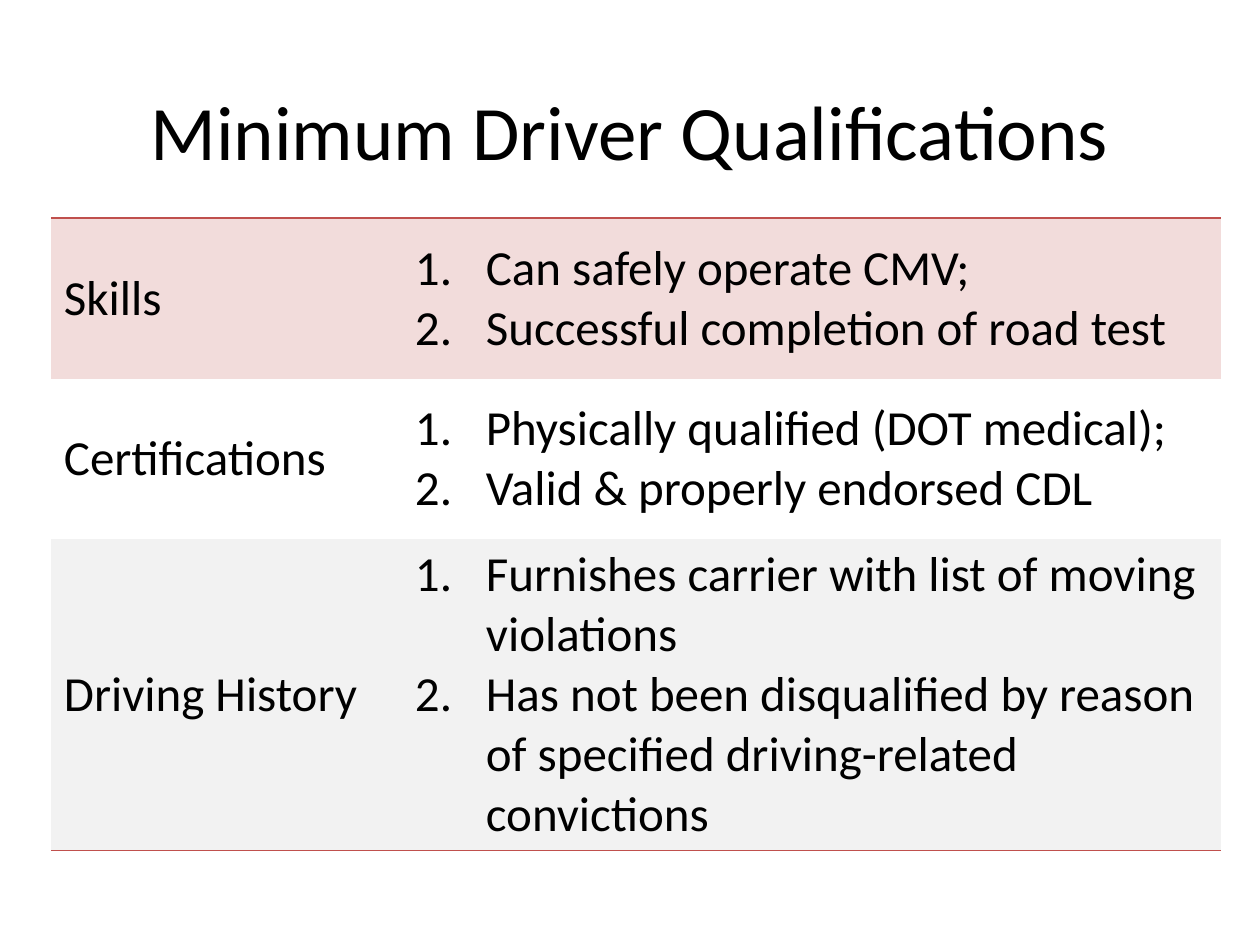
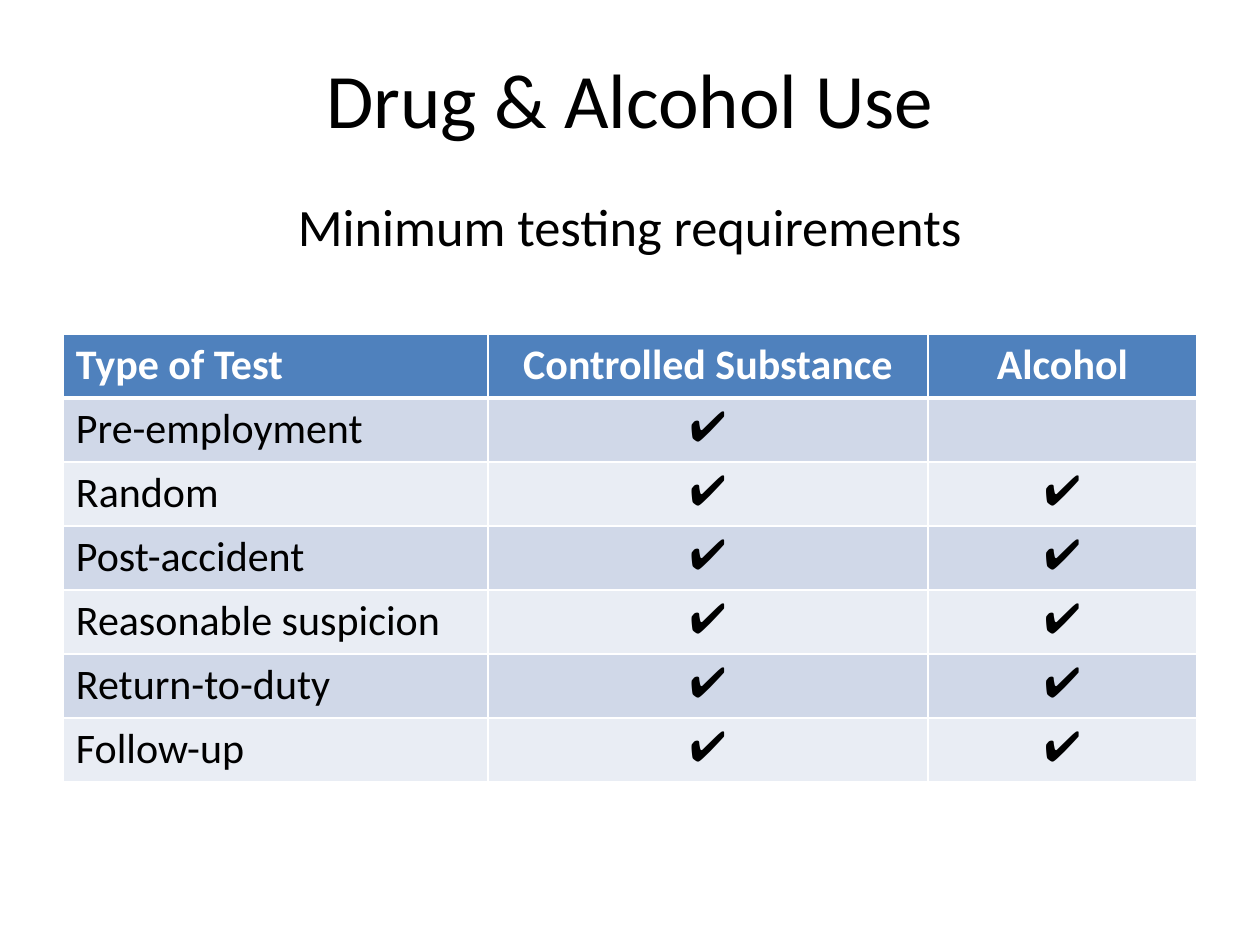
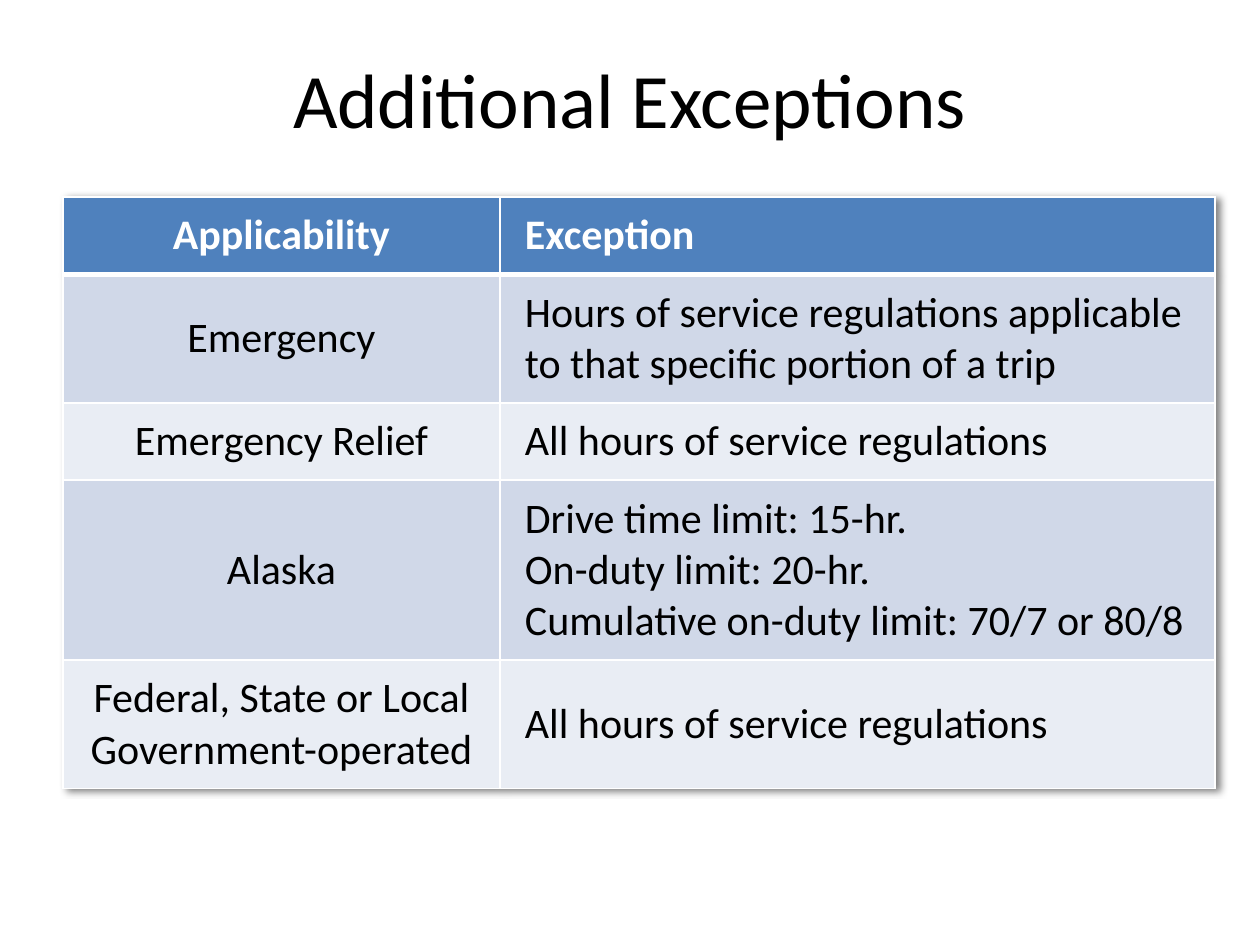
"""Builds three slides of driver rules: qualifications, drug testing and exceptions."""
import dataclasses

import pptx
import pptx.dml.color
import pptx.enum.text
import pptx.oxml
import pptx.oxml.ns
import pptx.util

ALIGN = pptx.enum.text.PP_ALIGN
ANCHOR = pptx.enum.text.MSO_ANCHOR
NO_STYLE = "{2D5ABB26-0587-4C30-8999-92F81FD0307C}"


@dataclasses.dataclass(frozen=True)
class Theme:
    font: str = "Calibri"
    mark_font: str = "Arial"
    ink: str = "000000"
    white: str = "FFFFFF"
    header: str = "4F81BD"
    bands: tuple = ("D0D8E8", "E9EDF4")
    rule: str = "C0504D"
    qualification_fills: tuple = ("F2DCDB", None, "F2F2F2")
    title_size: int = 44
    subtitle_size: int = 30
    list_size: int = 28
    grid_size: int = 24


theme = Theme()


def px(count):
    return pptx.util.Emu(round(count * 914400 / 126))


def write(frame, text, size, color=theme.ink, align=ALIGN.LEFT, bold=False, numbered=False):
    frame.text = text
    for paragraph in frame.paragraphs:
        paragraph.alignment = align
        paragraph.font.name = theme.mark_font if text == "✔" else theme.font
        paragraph.font.size = pptx.util.Pt(size)
        paragraph.font.bold = bold
        paragraph.font.color.rgb = pptx.dml.color.RGBColor.from_string(color)
        if numbered:
            properties = paragraph._p.get_or_add_pPr()
            properties.set("marL", str(px(71)))
            properties.set("indent", str(-px(71)))
            properties.insert(0, pptx.oxml.parse_xml(
                f'<a:buAutoNum {pptx.oxml.ns.nsdecls("a")} type="arabicPeriod"/>'))


qualifications = dict(
    title="Minimum Driver Qualifications", title_box=(63, 38, 1134, 183),
    corner=(51, 218), columns=(351, 819), heights=(161, 160, 311),
    size=theme.list_size, aligns=(ALIGN.LEFT, ALIGN.LEFT), anchor=ANCHOR.MIDDLE,
    margins=(13, 6), gridded=False, shadowed=False,
    rows=[
        ("Skills", "Can safely operate CMV;\nSuccessful completion of road test"),
        ("Certifications", "Physically qualified (DOT medical);\nValid & properly endorsed CDL"),
        ("Driving History", "Furnishes carrier with list of moving violations\n"
         "Has not been disqualified by reason of specified driving-related convictions"),
    ])
testing = dict(
    title="Drug & Alcohol Use", title_box=(63, 19, 1134, 158),
    subtitle="Minimum testing requirements",
    corner=(63, 334), columns=(425, 440, 269), heights=(64,) * 7,
    size=theme.grid_size, aligns=(ALIGN.LEFT, ALIGN.CENTER, ALIGN.CENTER), anchor=ANCHOR.TOP,
    margins=(13, 6), gridded=True, shadowed=False,
    rows=[
        ("Type of Test", "Controlled Substance", "Alcohol"),
        ("Pre-employment", "✔", ""),
        *((test, "✔", "✔") for test in (
            "Random", "Post-accident", "Reasonable suspicion", "Return-to-duty", "Follow-up")),
    ])
exceptions = dict(
    title="Additional Exceptions", title_box=(63, 19, 1134, 158),
    corner=(63, 197), columns=(437, 715), heights=(76, 128, 76, 180, 128),
    size=theme.grid_size, aligns=(ALIGN.CENTER, ALIGN.LEFT), anchor=ANCHOR.MIDDLE,
    margins=(25, 13), gridded=True, shadowed=True,
    rows=[
        ("Applicability", "Exception"),
        ("Emergency", "Hours of service regulations applicable to that specific portion of a trip"),
        ("Emergency Relief", "All hours of service regulations"),
        ("Alaska", "Drive time limit: 15-hr.\nOn-duty limit: 20-hr.\n"
         "Cumulative on-duty limit: 70/7 or 80/8"),
        ("Federal, State or Local Government-operated", "All hours of service regulations"),
    ])

deck = pptx.Presentation()
deck.slide_width, deck.slide_height = px(1260), px(945)

for topic in (qualifications, testing, exceptions):
    slide = deck.slides.add_slide(deck.slide_layouts[5])
    heading = slide.shapes.title
    heading.left, heading.top, heading.width, heading.height = map(px, topic["title_box"])
    heading.text_frame.vertical_anchor = ANCHOR.MIDDLE
    write(heading.text_frame, topic["title"], theme.title_size, align=ALIGN.CENTER)

    if "subtitle" in topic:
        subtitle = slide.shapes.add_textbox(*map(px, (63, 188, 1134, 113))).text_frame
        subtitle.word_wrap = True
        write(subtitle, topic["subtitle"], theme.subtitle_size, align=ALIGN.CENTER)
        subtitle.paragraphs[0].space_after = pptx.util.Pt(12)

    rows, columns, heights = topic["rows"], topic["columns"], topic["heights"]
    gridded = topic["gridded"]
    grid = slide.shapes.add_table(
        len(rows), len(columns), *map(px, (*topic["corner"], sum(columns), sum(heights)))).table
    grid.first_row, grid.horz_banding = gridded, gridded
    grid_properties = grid._tbl.tblPr
    grid_properties[0].text = NO_STYLE
    if topic["shadowed"]:
        grid_properties.insert(0, pptx.oxml.parse_xml(
            f'<a:effectLst {pptx.oxml.ns.nsdecls("a")}>'
            '<a:outerShdw blurRad="50800" dist="38100" dir="1200000" algn="l" rotWithShape="0">'
            '<a:srgbClr val="000000"><a:alpha val="50000"/></a:srgbClr>'
            '</a:outerShdw></a:effectLst>'))
    for column, width in zip(grid.columns, columns):
        column.width = px(width)

    for row_index, (row, height) in enumerate(zip(rows, heights)):
        grid.rows[row_index].height = px(height)
        is_header = gridded and row_index == 0
        if gridded:
            fill = theme.header if is_header else theme.bands[(row_index - 1) % 2]
            borders = {"L": 1, "R": 1, "T": 3 if row_index == 1 else 1, "B": 3 if is_header else 1}
        else:
            fill = theme.qualification_fills[row_index]
            borders = {0: {"T": 1}, len(rows) - 1: {"B": 1}}.get(row_index, {})
        border_color = theme.white if gridded else theme.rule

        for column_index, text in enumerate(row):
            cell = grid.cell(row_index, column_index)
            cell.vertical_anchor = topic["anchor"]
            cell.margin_left = cell.margin_right = px(topic["margins"][0])
            cell.margin_top = cell.margin_bottom = px(topic["margins"][1])
            for side, points in borders.items():
                cell._tc.get_or_add_tcPr().append(pptx.oxml.parse_xml(
                    f'<a:ln{side} {pptx.oxml.ns.nsdecls("a")} w="{pptx.util.Pt(points)}">'
                    f'<a:solidFill><a:srgbClr val="{border_color}"/></a:solidFill></a:ln{side}>'))
            if fill:
                cell.fill.solid()
                cell.fill.fore_color.rgb = pptx.dml.color.RGBColor.from_string(fill)
            else:
                cell.fill.background()
            write(cell.text_frame, text, topic["size"],
                  color=theme.white if is_header else theme.ink,
                  align=topic["aligns"][column_index], bold=is_header,
                  numbered=not gridded and column_index == 1)

deck.save("out.pptx")
